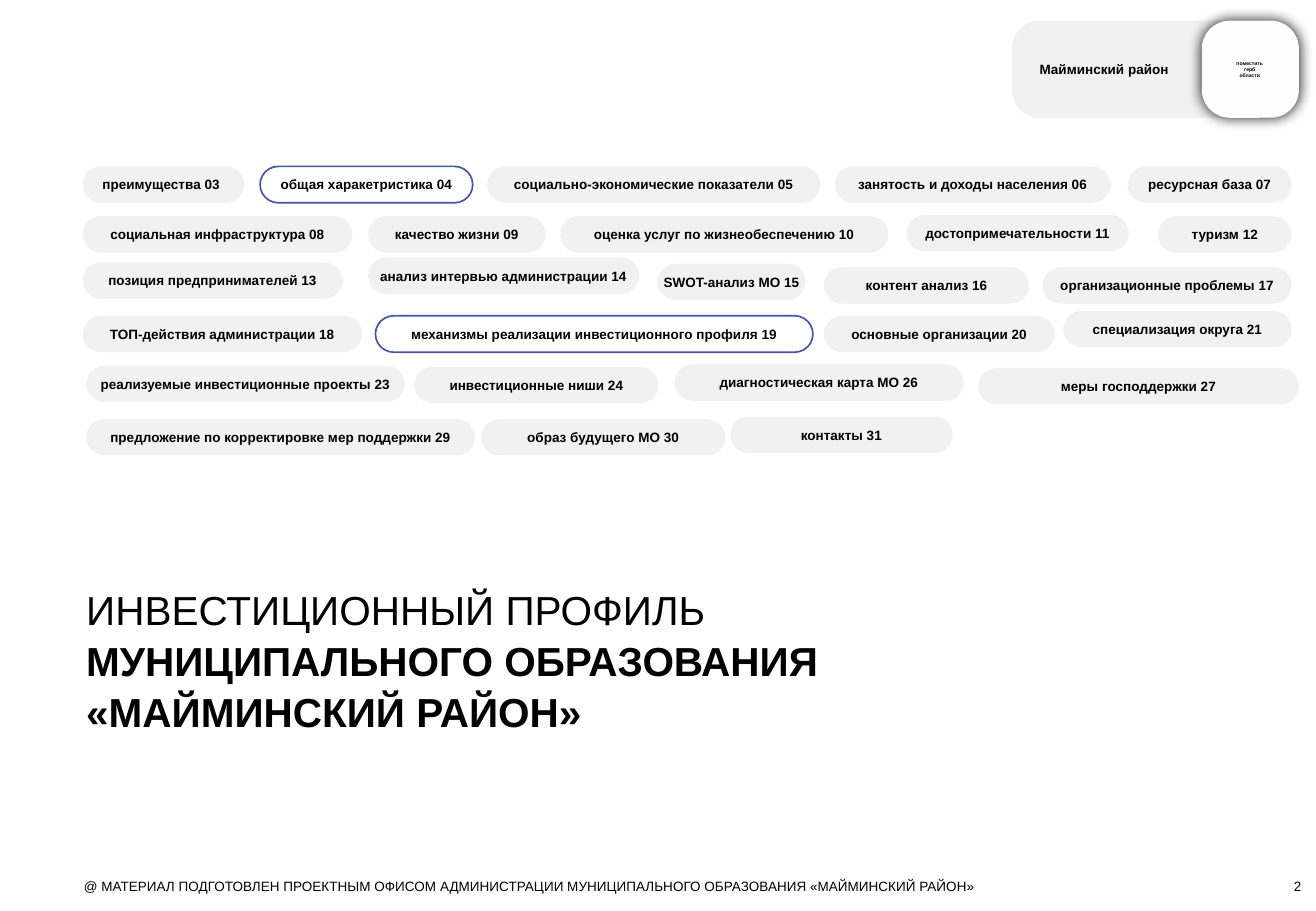
from lxml import etree
from pptx import Presentation
from pptx import util as u
from pptx.dml.color import RGBColor
from pptx.enum import shapes, text
from pptx.oxml.ns import qn

PX = 9144  # EMU in one px (100 px to the inch)
GREY, BLUE, BLACK, WHITE = "F1F1F1", "4756A0", "000000", "FEFEFE"
LEFT, CENTER, RIGHT = text.PP_ALIGN.LEFT, text.PP_ALIGN.CENTER, text.PP_ALIGN.RIGHT
PILL_H = 30


def color(value):
    return RGBColor.from_string(value)


class Deck:
    def __init__(self, width, height, font="Arial", size=8):
        self.font, self.size = font, size
        self.prs = Presentation()
        self.prs.slide_width, self.prs.slide_height = width * PX, height * PX
        self.s = self.prs.slides.add_slide(self.prs.slide_layouts[6])

    def set_text(self, sp, runs, align, anchor, insets=(0, 0, 0, 0), size=None,
                 wrap=True, spacing=None):
        """Fill a shape with one paragraph of (words, bold) runs."""
        tf = sp.text_frame
        tf.word_wrap, tf.vertical_anchor = wrap, anchor
        tf.margin_left, tf.margin_top, tf.margin_right, tf.margin_bottom = (
            i * PX for i in insets)
        p = tf.paragraphs[0]
        p.alignment = align
        if spacing:
            p.line_spacing = spacing
        for words, bold in runs:
            r = p.add_run()
            r.text = words
            r.font.name, r.font.size, r.font.bold = self.font, u.Pt(size or self.size), bold
            r.font.color.rgb = color(BLACK)

    def label(self, x, y, w, h, runs, align=LEFT, anchor=text.MSO_ANCHOR.TOP, **style):
        sp = self.s.shapes.add_textbox(x * PX, y * PX, w * PX, h * PX)
        self.set_text(sp, runs, align, anchor, **style)

    def rounded(self, x, y, w, h, radius=0.5, fill=None, line=None):
        sp = self.s.shapes.add_shape(shapes.MSO_SHAPE.ROUNDED_RECTANGLE,
                                     x * PX, y * PX, w * PX, h * PX)
        sp.adjustments[0] = radius
        sp.shadow.inherit = False
        if fill:
            sp.fill.solid()
            sp.fill.fore_color.rgb = color(fill)
        else:
            sp.fill.background()
        if line:
            sp.line.color.rgb = color(line)
            sp.line.width = u.Pt(1)
        else:
            sp.line.fill.background()
        return sp

    def pill(self, x, y, w, words, current=False, align=CENTER, inset=0):
        sp = self.rounded(x, y, w, PILL_H, fill=None if current else GREY,
                          line=BLUE if current else None)
        self.set_text(sp, [(words, True)], align, text.MSO_ANCHOR.MIDDLE,
                      insets=(inset, 0, 0, 0), wrap=align == LEFT)

    def glow(self, sp, blur, alpha):
        effects = sp._element.spPr.find(qn("a:effectLst"))
        shadow = etree.SubElement(effects, qn("a:outerShdw"), blurRad=str(u.Pt(blur)),
                                  dist="0", dir="0", algn="ctr", rotWithShape="0")
        tint = etree.SubElement(shadow, qn("a:srgbClr"), val=BLACK)
        etree.SubElement(tint, qn("a:alpha"), val=str(alpha * 1000))


# Contents: left, top, width, words
CONTENTS = [
    (401, 137, 274, "социально-экономические показатели 05"),
    (687, 137, 227, "занятость и доходы населения 06"),
    (928, 137, 135, "ресурсная база 07"),
    (68, 178, 222, "социальная инфраструктура 08"),
    (303, 178, 146, "качество жизни 09"),
    (461, 178, 270, "оценка услуг по жизнеобеспечению 10"),
    (746, 177, 183, "достопримечательности 11"),
    (953, 178, 110, "туризм 12"),
    (68, 216, 214, "позиция предпринимателей 13"),
    (303, 212, 223, "анализ интервью администрации 14"),
    (541, 217, 122, "SWOT-анализ МО 15"),
    (678, 220, 169, "контент анализ 16"),
    (858, 220, 205, "организационные проблемы 17"),
    (68, 260, 230, "ТОП-действия администрации 18"),
    (678, 260, 190, "основные организации 20"),
    (875, 256, 188, "специализация округа 21"),
    (71, 301, 262, "реализуемые инвестиционные проекты 23"),
    (341, 302, 201, "инвестиционные ниши 24"),
    (555, 300, 238, "диагностическая карта МО 26"),
    (805, 303, 264, "меры господдержки 27"),
    (71, 345, 320, "предложение по корректировке мер поддержки 29"),
    (396, 345, 201, "образ будущего МО 30"),
    (601, 343, 183, "контакты 31"),
]
HIGHLIGHTED = [
    (214, 137, 175, "общая харакетристика 04"),
    (309, 260, 360, "механизмы реализации инвестиционного профиля 19"),
]


def main():
    d = Deck(1083, 750)

    # Contents pills
    d.pill(68, 137, 133, "преимущества 03", align=LEFT, inset=12)
    for item in CONTENTS:
        d.pill(*item)
    for item in HIGHLIGHTED:
        d.pill(*item, current=True)

    # District badge with a place for the coat of arms
    badge = d.rounded(833, 17, 236, 80, radius=0.28, fill=GREY)
    d.set_text(badge, [("Майминский район", True)], LEFT, text.MSO_ANCHOR.MIDDLE,
               insets=(16, 5, 79, 5))
    d.glow(d.rounded(989, 17, 80, 80, radius=0.29, fill=WHITE), blur=8.4, alpha=92)
    d.label(1016, 50, 25, 15, [("поместить герб области", True)], CENTER, size=3)

    # Title
    d.label(71, 480, 800, 121,
            [("ИНВЕСТИЦИОННЫЙ ПРОФИЛЬ ", False),
             ("МУНИЦИПАЛЬНОГО ОБРАЗОВАНИЯ «МАЙМИНСКИЙ РАЙОН»", True)],
            size=24, spacing=1.05)

    # Footer and page number
    d.label(69, 723, 800, 13,
            [("@ МАТЕРИАЛ ПОДГОТОВЛЕН ПРОЕКТНЫМ ОФИСОМ АДМИНИСТРАЦИИ "
              "МУНИЦИПАЛЬНОГО ОБРАЗОВАНИЯ «МАЙМИНСКИЙ РАЙОН»", False)])
    d.label(991, 723, 80, 13, [("2", False)], RIGHT, text.MSO_ANCHOR.BOTTOM)

    d.prs.save("out.pptx")


if __name__ == "__main__":
    main()
